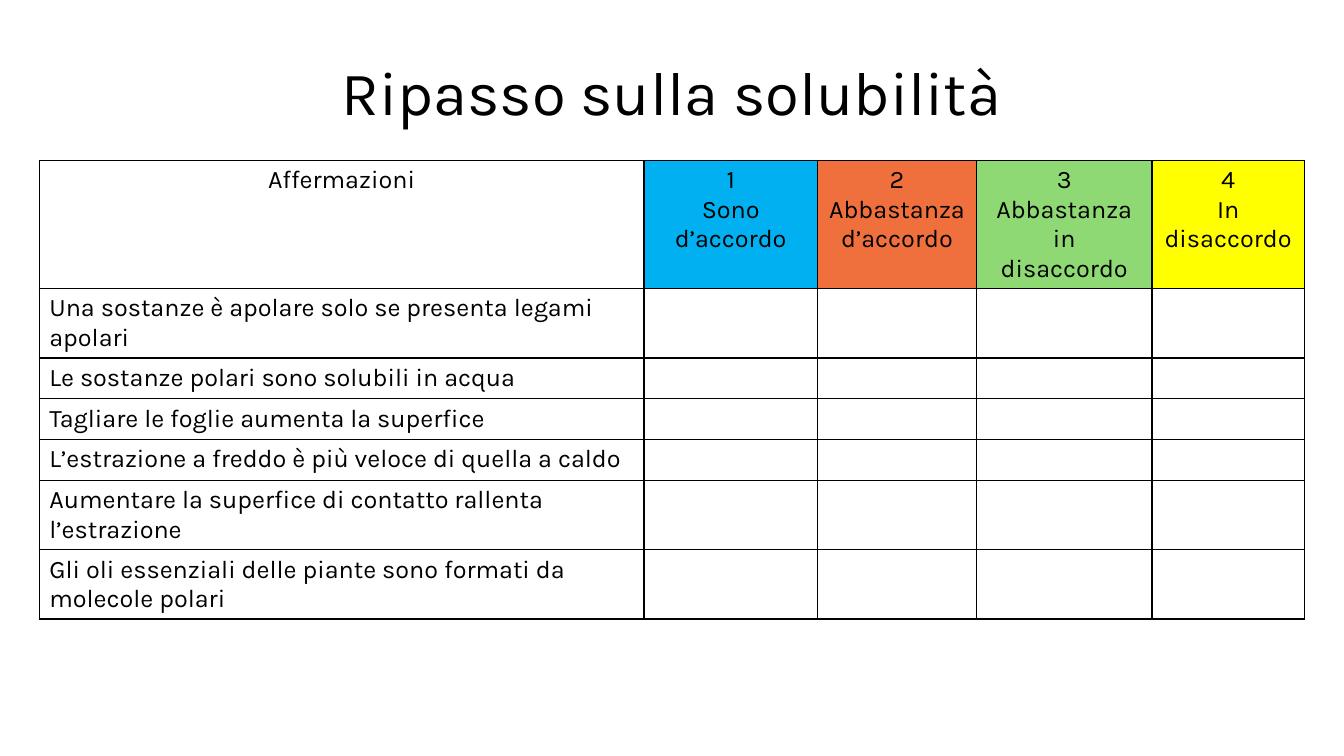
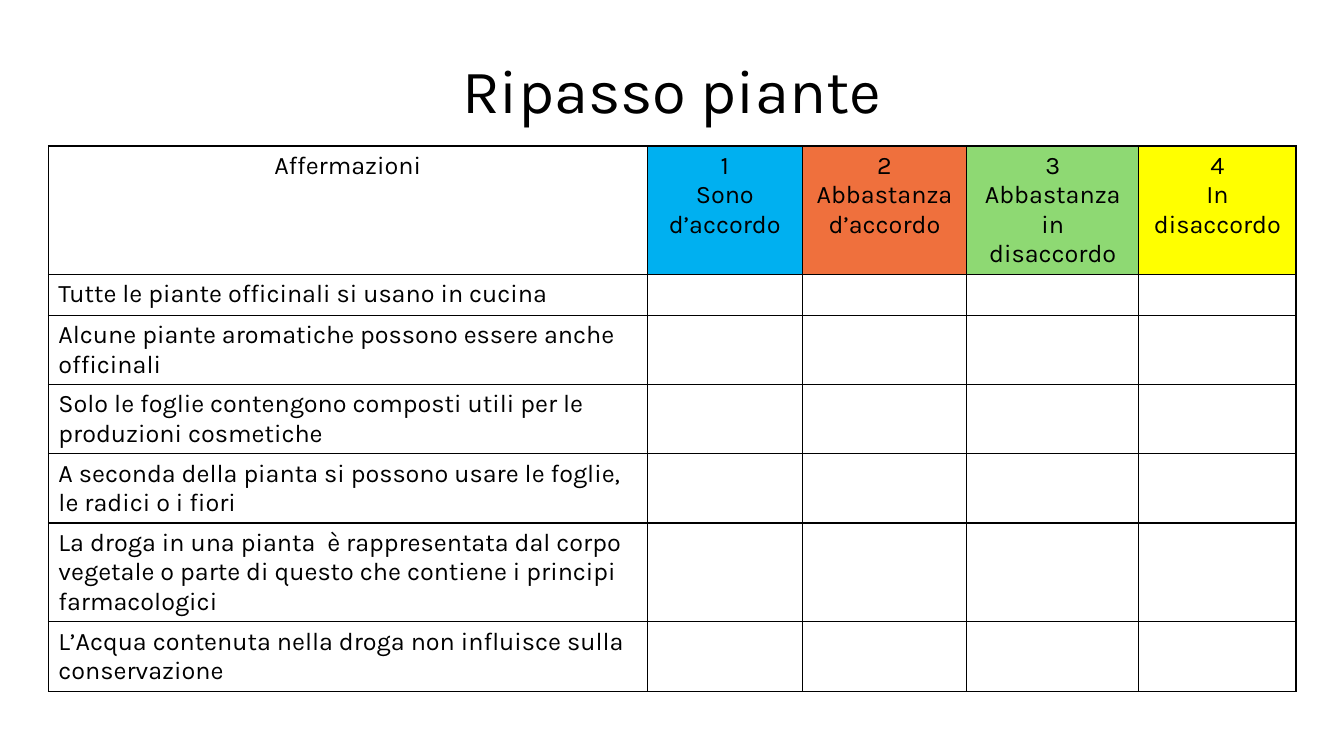
from lxml.etree import SubElement
from pptx import Presentation
from pptx.dml.color import RGBColor
from pptx.enum.text import MSO_ANCHOR as Anchor, MSO_AUTO_SIZE as AutoSize, PP_ALIGN as Align
from pptx.oxml.ns import qn
from pptx.util import Cm, Pt

FONT = "Karla"
COLORS = {
    "text": "000000",
    "paper": "FFFFFF",
    "agree": "00B0F0",
    "partly agree": "EF703D",
    "partly disagree": "8ED973",
    "disagree": "FFFF00",
}
HEADINGS = [
    ("Affermazioni", "paper"),
    ("1\nSono d’accordo", "agree"),
    ("2\nAbbastanza d’accordo", "partly agree"),
    ("3\nAbbastanza in disaccordo", "partly disagree"),
    ("4\nIn disaccordo", "disagree"),
]
REVIEWS = [
    {
        "title": "Ripasso sulla solubilità",
        "title_height": 2.82,
        "corner": (0.99, 4.04),
        "columns": (15.24, 4.37, 4.01, 4.42, 3.84),
        "statements": [
            "Una sostanze è apolare solo se presenta legami apolari",
            "Le sostanze polari sono solubili in acqua",
            "Tagliare le foglie aumenta la superfice",
            "L’estrazione a freddo è più veloce di quella a caldo",
            "Aumentare la superfice di contatto rallenta l’estrazione",
            "Gli oli essenziali delle piante sono formati da molecole polari",
        ],
    },
    {
        "title": "Ripasso piante",
        "title_height": 2.67,
        "corner": (1.22, 3.68),
        "columns": (15.09, 3.91, 4.14, 4.34, 3.96),
        "statements": [
            "Tutte le piante officinali si usano in cucina",
            "Alcune piante aromatiche possono essere anche officinali",
            "Solo le foglie contengono composti utili per le produzioni cosmetiche",
            "A seconda della pianta si possono usare le foglie, le radici o i fiori",
            "La droga in una pianta  è rappresentata dal corpo vegetale o parte di questo "
            "che contiene i principi farmacologici",
            "L’Acqua contenuta nella droga non influisce sulla conservazione",
        ],
    },
]
ROW_HEIGHT = 1.03


def rgb(name):
    return RGBColor.from_string(COLORS[name])


def style_font(font, size):
    font.name = FONT
    font.size = Pt(size)
    font.color.rgb = rgb("text")


def add_borders(cell):
    properties = cell._tc.get_or_add_tcPr()
    for position, side in enumerate(("lnL", "lnR", "lnT", "lnB")):
        border = SubElement(properties, qn(f"a:{side}"), w=str(Pt(1)))
        fill = SubElement(border, qn("a:solidFill"))
        SubElement(fill, qn("a:srgbClr"), val=COLORS["text"])
        properties.insert(position, border)


def fill_cell(cell, text, color, align):
    cell.fill.solid()
    cell.fill.fore_color.rgb = rgb(color)
    add_borders(cell)
    cell.text_frame.text = text
    for paragraph in cell.text_frame.paragraphs:
        paragraph.alignment = align
        style_font(paragraph.font, 18)
        for run in paragraph.runs:
            style_font(run.font, 18)


def add_title(slide, text, height):
    title = slide.shapes.title
    title.left, title.top, title.width, title.height = Cm(2.33), Cm(1.01), Cm(29.21), Cm(height)
    frame = title.text_frame
    frame.text = text
    frame.auto_size = AutoSize.NONE
    frame.vertical_anchor = Anchor.MIDDLE
    heading = frame.paragraphs[0]
    heading.alignment = Align.CENTER
    heading.line_spacing = 0.9
    style_font(heading.runs[0].font, 44)


def add_survey(slide, corner, columns, statements):
    row_count = len(statements) + 1
    left, top = corner
    survey = slide.shapes.add_table(
        row_count, len(columns), Cm(left), Cm(top), Cm(sum(columns)), Cm(ROW_HEIGHT * row_count)
    ).table
    survey.first_row = survey.horz_banding = False
    for column, width in zip(survey.columns, columns):
        column.width = Cm(width)
    for row in survey.rows:
        row.height = Cm(ROW_HEIGHT)
    for index, (heading, color) in enumerate(HEADINGS):
        fill_cell(survey.cell(0, index), heading, color, Align.CENTER)
    for row, statement in enumerate(statements, 1):
        for index in range(len(columns)):
            fill_cell(survey.cell(row, index), "" if index else statement, "paper", Align.LEFT)


def main():
    deck = Presentation()
    deck.slide_width, deck.slide_height = Cm(33.87), Cm(19.05)
    title_only = deck.slide_layouts[5]
    for review in REVIEWS:
        slide = deck.slides.add_slide(title_only)
        add_title(slide, review["title"], review["title_height"])
        add_survey(slide, review["corner"], review["columns"], review["statements"])
    deck.save("out.pptx")


if __name__ == "__main__":
    main()
